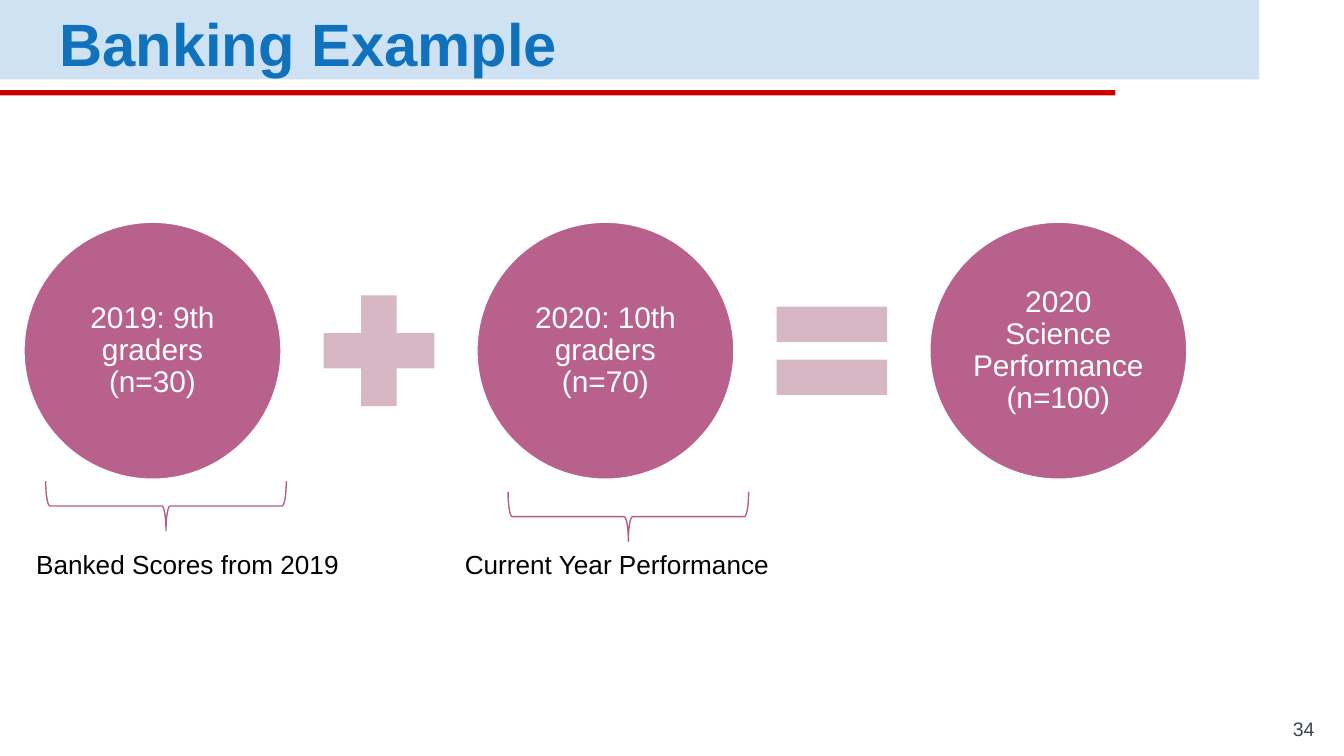
from pptx import Presentation
from pptx.dml.color import RGBColor
from pptx.enum.shapes import MSO_SHAPE as SHAPE
from pptx.enum.text import MSO_ANCHOR as ANCHOR, PP_ALIGN as ALIGN
from pptx.util import Inches, Pt

TITLE = "Banking Example"
PAGE = "34"
BARS = [(0, 9.37, 0.59, "CFE2F3"), (0.67, 8.3, 0.04, "CC0000")]
TERMS = ["2019: 9th graders (n=30)", "2020: 10th graders (n=70)",
         "2020 Science Performance (n=100)"]
OPERATORS = [SHAPE.MATH_PLUS, SHAPE.MATH_EQUAL]
BRACES = [(1.05, 2.87), (4.49, 2.95)]
LABELS = [(0.17, "Banked Scores from 2019"), (3.36, "Current Year Performance")]

WIDTH = 10
LEFT, MIDDLE, PITCH = 0.17, 2.61, 3.37
CIRCLE, OPERATOR = 1.93, 1.12


def color(value):
    return RGBColor.from_string(value)


def write(sp, text, size, fill, bold=False, align=ALIGN.LEFT, anchor=ANCHOR.TOP,
          inset=None, spacing=None, after=None):
    tf = sp.text_frame
    tf.word_wrap = True
    tf.vertical_anchor = anchor
    if inset is not None:
        tf.margin_left = tf.margin_right = Inches(inset)
        tf.margin_top = tf.margin_bottom = Inches(inset)
    p = tf.paragraphs[0]
    p.alignment = align
    if spacing is not None:
        p.line_spacing = spacing
    if after is not None:
        p.space_after = Pt(after)
    r = p.add_run()
    r.text = text
    r.font.name, r.font.size, r.font.bold = "Arial", Pt(size), bold
    r.font.color.rgb = color(fill)


def add_shape(slide, kind, x, y, w, h, fill=None, line=None, width=1):
    sp = slide.shapes.add_shape(kind, Inches(x), Inches(y), Inches(w), Inches(h))
    sp.shadow.inherit = False
    if fill:
        sp.fill.solid()
        sp.fill.fore_color.rgb = color(fill)
    else:
        sp.fill.background()
    if line:
        sp.line.color.rgb = color(line)
        sp.line.width = Pt(width)
    else:
        sp.line.fill.background()
    return sp


def add_text(slide, x, y, w, h, text, **style):
    box = slide.shapes.add_textbox(Inches(x), Inches(y), Inches(w), Inches(h))
    write(box, text, **style)


def main():
    """Build the banking example slide and save it."""
    prs = Presentation()
    prs.slide_width, prs.slide_height = Inches(WIDTH), Inches(WIDTH * 9 / 16)
    slide = prs.slides.add_slide(prs.slide_layouts[5])

    for y, w, h, fill in BARS:
        add_shape(slide, SHAPE.RECTANGLE, 0, y, w, h, fill)

    title = slide.shapes.title
    title.left, title.top = Inches(0.34), Inches(0.03)
    title.width, title.height = Inches(9.03), Inches(0.49)
    write(title, TITLE, size=32, fill="1071BD", bold=True, anchor=ANCHOR.MIDDLE,
          inset=0.1, spacing=1.15, after=16)
    slide.shapes._spTree.append(title._element)

    add_text(slide, 9.28, 5.34, 0.6, 0.26, PAGE, size=10.5, fill="3A4950",
             align=ALIGN.RIGHT, anchor=ANCHOR.BOTTOM, inset=0.1)

    for i, term in enumerate(TERMS):
        sp = add_shape(slide, SHAPE.OVAL, LEFT + i * PITCH, MIDDLE - CIRCLE / 2,
                       CIRCLE, CIRCLE, "B7618C", "FFFFFF", 2)
        write(sp, term, size=16, fill="FFFFFF", align=ALIGN.CENTER,
              anchor=ANCHOR.MIDDLE, inset=0.02, spacing=0.9, after=5.6)

    gap = (PITCH - CIRCLE - OPERATOR) / 2
    for i, kind in enumerate(OPERATORS):
        add_shape(slide, kind, LEFT + i * PITCH + CIRCLE + gap,
                  MIDDLE - OPERATOR / 2, OPERATOR, OPERATOR, "D8B7C5")

    for x, y in BRACES:
        sp = add_shape(slide, SHAPE.RIGHT_BRACE, x, y, 0.37, 1.79,
                       line="B55D89", width=0.75)
        sp.rotation = 90

    for x, label in LABELS:
        add_text(slide, x, 4.03, 2.62, 0.34, label, size=14, fill="000000")

    prs.save("out.pptx")


if __name__ == "__main__":
    main()
